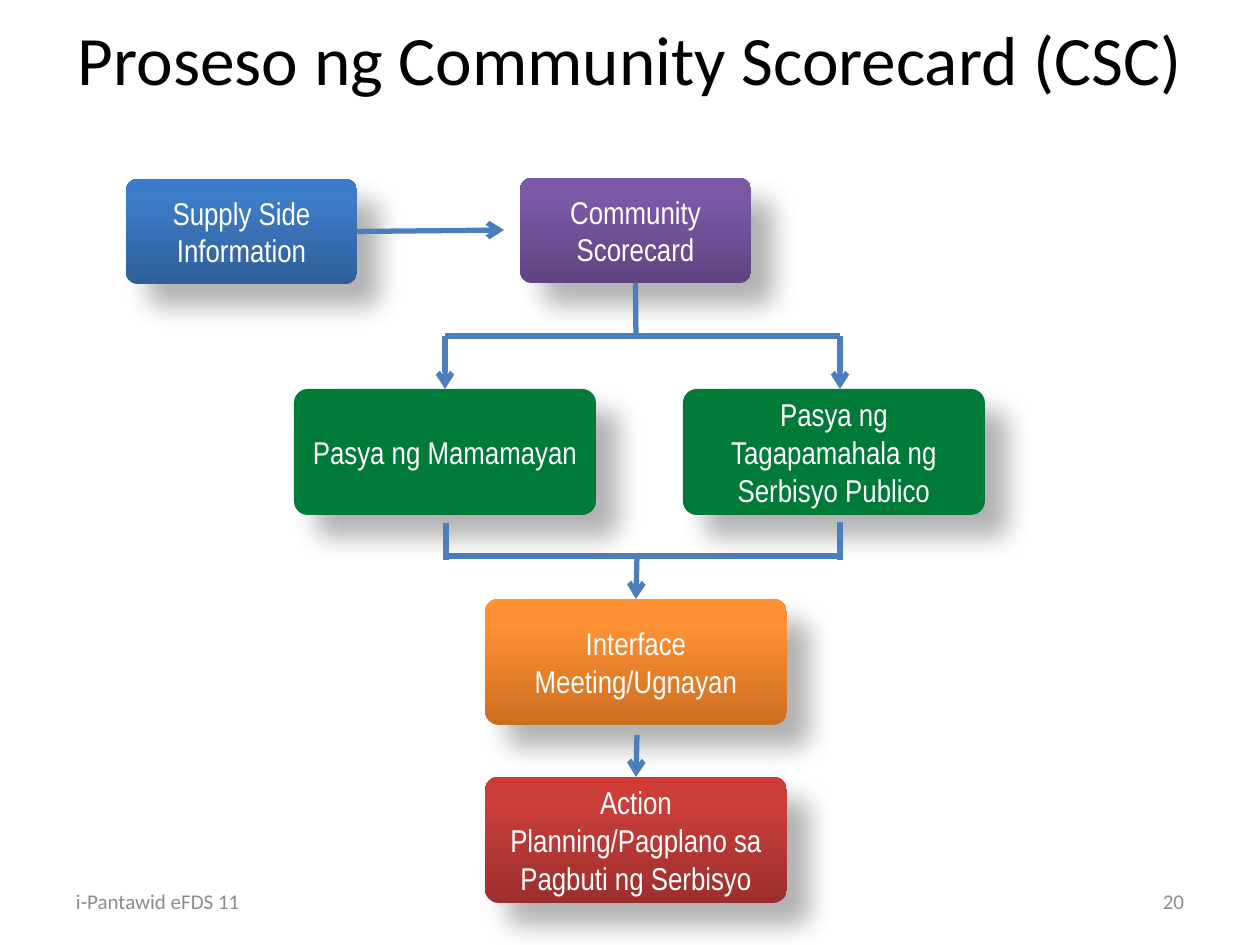
"""Builds the Community Scorecard process slide."""
from copy import deepcopy
from dataclasses import dataclass

from lxml.etree import SubElement
from pptx import Presentation
from pptx.dml.color import RGBColor
from pptx.enum.shapes import MSO_CONNECTOR as LINK, MSO_SHAPE as SHAPE
from pptx.enum.text import MSO_ANCHOR as ANCHOR, PP_ALIGN as ALIGN
from pptx.oxml.ns import qn
from pptx.util import Pt


@dataclass(frozen=True)
class Theme:
    blue: tuple = ("2F5F99", "3D7CC7", "3A7CCB")
    purple: tuple = ("5F4480", "7B58A6", "7C57A8")
    green: tuple = ("007A37",)
    orange: tuple = ("CC6E20", "FF9034", "FF9136")
    red: tuple = ("9C2F2D", "CB3E3A", "CE3B37")
    line: str = "4B7EBC"
    title: str = "000000"
    label: str = "FFFFFF"
    footer: str = "8C8C8C"
    shadow: str = "000000"
    body_font: str = "Calibri"
    box_font: str = "Arial Narrow"
    title_size: float = 39.6
    box_size: float = 18
    footer_size: float = 12
    line_width: float = 3


THEME = Theme()
PX = 914400 / 126
TOP, BOTTOM, RIGHT = 0, 2, 3
SMALL, LARGE = (231, 105), (302, 126)

TEXTS = [
    ("Proseso ng Community Scorecard (CSC)", (63, 10, 1134, 158),
     dict(size=THEME.title_size, color=THEME.title, align=ALIGN.CENTER, inset=0)),
    ("i-Pantawid eFDS 11", (63, 876, 294, 50),
     dict(size=THEME.footer_size, color=THEME.footer, anchor=ANCHOR.MIDDLE)),
    ("20", (903, 876, 294, 50),
     dict(size=THEME.footer_size, color=THEME.footer, align=ALIGN.RIGHT, anchor=ANCHOR.MIDDLE)),
]
STEPS = {
    "supply": ("Supply Side Information", (126, 179), SMALL, THEME.blue),
    "scorecard": ("Community Scorecard", (520, 178), SMALL, THEME.purple),
    "citizens": ("Pasya ng Mamamayan", (294, 389), LARGE, THEME.green),
    "managers": ("Pasya ng Tagapamahala ng Serbisyo Publico", (683, 389), LARGE, THEME.green),
    "meeting": ("Interface Meeting/Ugnayan", (485, 599), LARGE, THEME.orange),
    "planning": ("Action Planning/Pagplano sa Pagbuti ng Serbisyo", (485, 777), LARGE, THEME.red),
}
LINES = [
    (("supply", RIGHT), (504, 230), True),
    (("scorecard", BOTTOM), (636, 336), False),
    ((445, 336), (840, 336), False),
    ((445, 336), ("citizens", TOP), True),
    ((840, 336), (840, 389), True),
    ((446, 556), (841, 556), False),
    ((446, 523), (446, 560), False),
    ((840, 522), (840, 560), False),
    ((637, 556), ("meeting", TOP), True),
    ((637, 735), ("planning", TOP), True),
]


def emu(*lengths):
    return [round(length * PX) for length in lengths]


def write(box, text, size, color, font=THEME.body_font, align=ALIGN.LEFT,
          anchor=ANCHOR.TOP, inset=13):
    frame = box.text_frame
    frame.word_wrap = True
    frame.vertical_anchor = anchor
    frame.margin_left = frame.margin_right = emu(inset)[0]
    para = frame.paragraphs[0]
    para.alignment = align
    span = para.add_run()
    span.text = text
    span.font.size = Pt(size)
    span.font.name = font
    span.font.color.rgb = RGBColor.from_string(color)


def paint(box, colors):
    if len(colors) == 1:
        box.fill.solid()
        box.fill.fore_color.rgb = RGBColor.from_string(colors[0])
        return
    box.fill.gradient()
    box.fill.gradient_angle = 90
    stop_list = box.element.spPr.find(".//" + qn("a:gsLst"))
    stop_list.append(deepcopy(stop_list[0]))
    for stop, position, color in zip(box.fill.gradient_stops, (0, 0.8, 1), colors):
        stop.position = position
        stop.color.rgb = RGBColor.from_string(color)


def cast_shadow(box):
    box.shadow.inherit = False
    effects = box.element.spPr.find(qn("a:effectLst"))
    shadow = SubElement(effects, qn("a:outerShdw"), blurRad=str(Pt(15)), dist=str(Pt(18)),
                        dir=str(45 * 60000), algn="ctr", rotWithShape="0")
    color = SubElement(shadow, qn("a:srgbClr"), val=THEME.shadow)
    SubElement(color, qn("a:alpha"), val="30000")


def add_step(page, text, corner, size, colors):
    box = page.shapes.add_shape(SHAPE.ROUNDED_RECTANGLE, *emu(*corner, *size))
    box.adjustments[0] = 0.11
    paint(box, colors)
    box.line.fill.background()
    cast_shadow(box)
    write(box, text, THEME.box_size, THEME.label, font=THEME.box_font,
          align=ALIGN.CENTER, anchor=ANCHOR.MIDDLE)
    return box


def add_line(page, boxes, start, end, arrow):
    points = [(0, 0) if point[0] in boxes else point for point in (start, end)]
    line = page.shapes.add_connector(LINK.STRAIGHT, *emu(*points[0], *points[1]))
    for (name, site), connect in ((start, line.begin_connect), (end, line.end_connect)):
        if name in boxes:
            connect(boxes[name], site)
    line.line.color.rgb = RGBColor.from_string(THEME.line)
    line.line.width = Pt(THEME.line_width)
    properties = line.element.spPr
    if arrow:
        SubElement(properties.find(qn("a:ln")), qn("a:tailEnd"), type="arrow")
    SubElement(properties, qn("a:effectLst"))


def main():
    deck = Presentation()
    deck.slide_width, deck.slide_height = emu(1260, 945)
    page = deck.slides.add_slide(deck.slide_layouts[6])
    for text, place, style in TEXTS:
        write(page.shapes.add_textbox(*emu(*place)), text, **style)
    boxes = {name: add_step(page, *step) for name, step in STEPS.items()}
    for start, end, arrow in LINES:
        add_line(page, boxes, start, end, arrow)
    deck.save("out.pptx")


if __name__ == "__main__":
    main()
